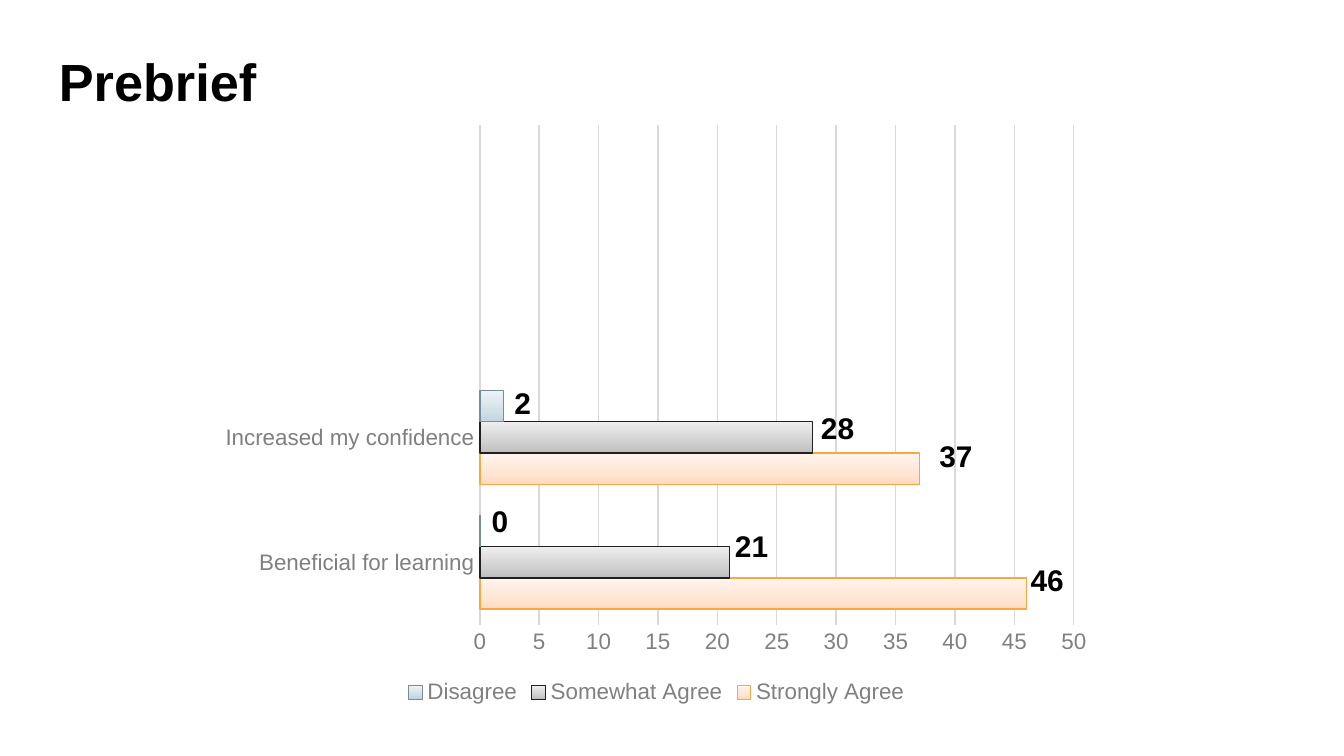
from copy import deepcopy

from lxml import etree
from pptx import Presentation
from pptx.chart.data import CategoryChartData
from pptx.dml.color import RGBColor
from pptx.enum.chart import XL_CHART_TYPE, XL_LEGEND_POSITION, XL_TICK_MARK
from pptx.enum.text import MSO_ANCHOR
from pptx.oxml.ns import qn
from pptx.util import Inches, Pt

BAR_CLUSTERED = XL_CHART_TYPE.BAR_CLUSTERED
LEGEND_BOTTOM = XL_LEGEND_POSITION.BOTTOM
NO_TICK = XL_TICK_MARK.NONE
TOP = MSO_ANCHOR.TOP

FONT = "Arial"
BLACK, GRAY, LIGHT_GRAY = "000000", "808080", "D9D9D9"
CHART_WIDTH, CHART_HEIGHT = 6.67, 4.44

# The two unnamed categories keep the upper half of the chart empty
CATEGORIES = ["Beneficial for learning", "Increased my confidence", "", ""]
# Name, values, gradient colours from bottom to top, outline
ANSWERS = [
    ("Strongly Agree", [46, 37, None, None], ["FFDAC0", "FFE5D3", "FFF5EE"], "F9A73F"),
    ("Somewhat Agree", [21, 28, None, None], ["BDBDBD", "D1D1D1", "EEEEEE"], "202020"),
    ("Disagree", [0, 2, None, None], ["C0D4E0", "D3E0E8", "EEF3F7"], "758D99"),
]
GRADIENT_POSITIONS = [0, 0.35, 1]

# Text, left, top, width
VALUE_LABELS = [
    ("2", 3.73, 2.81, 0.33),
    ("0", 3.56, 3.69, 0.33),
    ("21", 5.37, 3.88, 0.45),
    ("46", 7.57, 4.13, 0.45),
    ("28", 6.01, 3.00, 0.45),
    ("37", 6.89, 3.21, 0.45),
]


def color(value):
    return RGBColor.from_string(value)


def style_font(font, size, value, bold=False):
    font.name = FONT
    font.size = Pt(size)
    font.bold = bold
    font.color.rgb = color(value)


def style_line(line, value, width=0.75):
    line.color.rgb = color(value)
    line.width = Pt(width)


def add_text(slide, text, left, top, width, height, size=16, wrap=False, margin=None):
    box = slide.shapes.add_textbox(Inches(left), Inches(top), Inches(width), Inches(height))
    frame = box.text_frame
    frame.word_wrap = wrap
    frame.vertical_anchor = TOP
    if margin:
        frame.margin_left = frame.margin_right = Inches(margin)
        frame.margin_top = frame.margin_bottom = Inches(margin)
    span = frame.paragraphs[0].add_run()
    span.text = text
    style_font(span.font, size, BLACK, bold=True)


def fill_gradient(series, colors):
    fill = series.format.fill
    fill.gradient()
    fill.gradient_angle = 90
    # A new gradient has two stops, and each bar needs three
    stop_list = next(series._element.iter(qn("a:gsLst")))
    stop_list.append(deepcopy(stop_list[0]))
    for stop, position, value in zip(fill.gradient_stops, GRADIENT_POSITIONS, colors):
        stop.position = position
        stop.color.rgb = color(value)


def place_plot(chart, left, top, width, height):
    """Fix the inner plot area, in inches from the corner of the chart."""
    plot_area = chart._chartSpace.chart.plotArea
    for old in plot_area.findall(qn("c:layout")):
        plot_area.remove(old)
    layout = etree.Element(qn("c:layout"))
    plot_area.insert(0, layout)
    manual = etree.SubElement(layout, qn("c:manualLayout"))
    settings = [("layoutTarget", "inner"), ("xMode", "edge"), ("yMode", "edge"),
                ("x", left / CHART_WIDTH), ("y", top / CHART_HEIGHT),
                ("w", width / CHART_WIDTH), ("h", height / CHART_HEIGHT)]
    for name, value in settings:
        etree.SubElement(manual, qn(f"c:{name}")).set("val", str(value))


def style_axes(chart):
    for axis in (chart.category_axis, chart.value_axis):
        axis.major_tick_mark = axis.minor_tick_mark = NO_TICK
        style_font(axis.tick_labels.font, 12, GRAY)
    style_line(chart.category_axis.format.line, LIGHT_GRAY)
    values = chart.value_axis
    values.minimum_scale, values.maximum_scale, values.major_unit = 0, 50, 5
    values.format.line.fill.background()
    values.has_major_gridlines = True
    style_line(values.major_gridlines.format.line, LIGHT_GRAY)


def add_answer_chart(slide):
    data = CategoryChartData()
    data.categories = CATEGORIES
    for name, values, _, _ in ANSWERS:
        data.add_series(name, values)
    chart = slide.shapes.add_chart(
        BAR_CLUSTERED, Inches(1.55), Inches(0.84),
        Inches(CHART_WIDTH), Inches(CHART_HEIGHT), data
    ).chart
    style_font(chart.font, 10, BLACK)
    chart.has_title = False

    # Bars
    plot = chart.plots[0]
    plot.gap_width = 100
    plot.vary_by_categories = False
    for series, (_, _, colors, outline) in zip(plot.series, ANSWERS):
        fill_gradient(series, colors)
        style_line(series.format.line, outline)

    # Axes and legend
    style_axes(chart)
    chart.has_legend = True
    chart.legend.position = LEGEND_BOTTOM
    chart.legend.include_in_layout = False
    style_font(chart.legend.font, 12, GRAY)
    place_plot(chart, 2.02, 0.09, 4.42, 3.72)


def main():
    deck = Presentation()
    # Widescreen, 16 to 9
    deck.slide_width = Inches(10)
    deck.slide_height = deck.slide_width * 9 // 16
    page = deck.slides.add_slide(deck.slide_layouts[6])

    # Title
    add_text(page, "Prebrief", 0.34, 0.27, 9.32, 0.63, size=28, wrap=True, margin=0.1)

    # Chart with its value labels
    add_answer_chart(page)
    for text, left, top, width in VALUE_LABELS:
        add_text(page, text, left, top, width, 0.37)

    deck.save("out.pptx")


if __name__ == "__main__":
    main()
